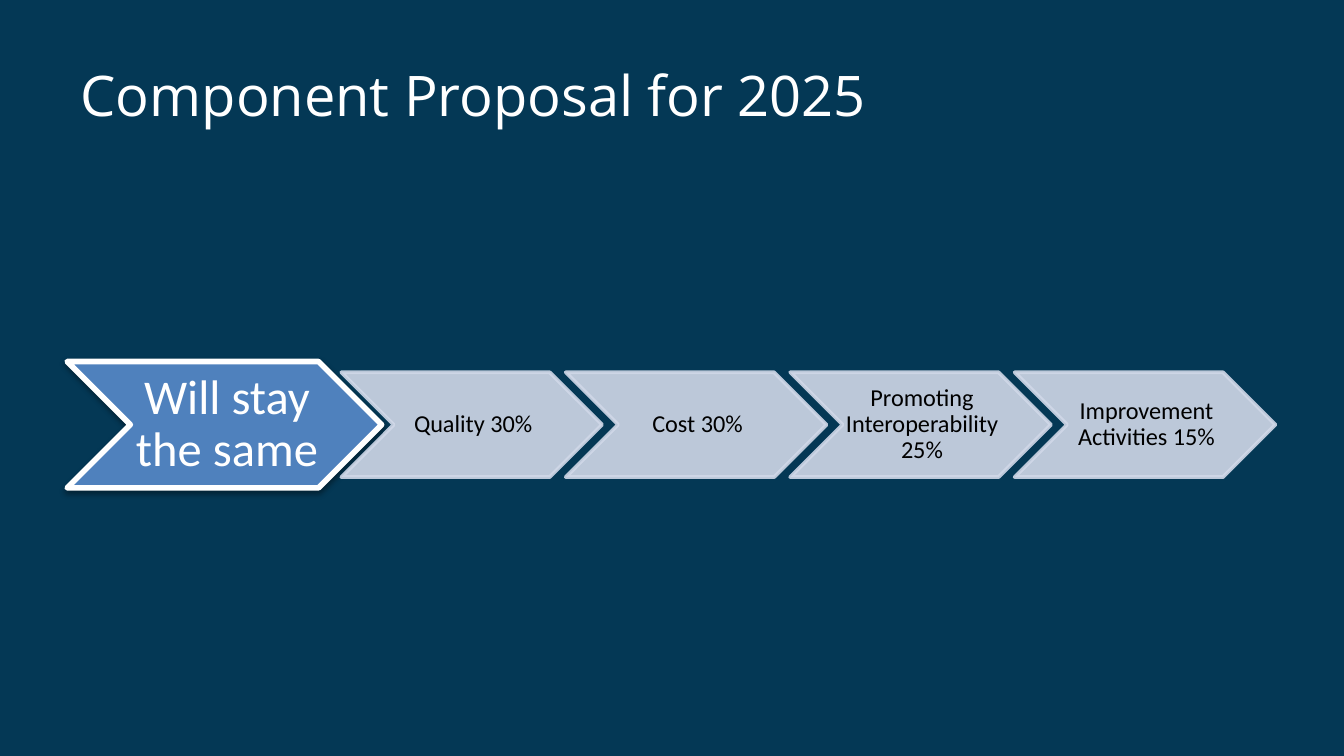
from lxml.etree import SubElement
from pptx import Presentation
from pptx.dml.color import RGBColor
from pptx.enum.shapes import MSO_SHAPE
from pptx.enum.text import MSO_ANCHOR, PP_ALIGN
from pptx.oxml.ns import qn
from pptx.util import Inches, Pt

TITLE = "Component Proposal for 2025"
LEAD = "Will stay the same"
COMPONENTS = [
    "Quality 30%",
    "Cost 30%",
    "Promoting Interoperability 25%",
    "Improvement Activities 15%",
]

SLIDE_WIDTH = 10
SLIDE_HEIGHT = SLIDE_WIDTH * 9 / 16
MIDDLE = 3.16
LEAD_LEFT, LEAD_SIZE = 0.5, (2.34, 0.94)
STEP_LEFT, STEP_PITCH, STEP_SIZE = 2.54, 1.67, (1.94, 0.78)


def color(value):
    return RGBColor.from_string(value)


def add_run(para, text, size, font, ink):
    span = para.add_run()
    span.text = text
    span.font.size = Pt(size)
    span.font.name = font
    span.font.color.rgb = color(ink)


def add_chevron(slide, text, left, size, fill, line, weight, ink, points, inset):
    """Add a labelled chevron centred on the row's middle line."""
    width, height = size
    chevron = slide.shapes.add_shape(
        MSO_SHAPE.CHEVRON, Inches(left), Inches(MIDDLE - height / 2),
        Inches(width), Inches(height))
    chevron.shadow.inherit = False
    chevron.fill.solid()
    chevron.fill.fore_color.rgb = color(fill)
    chevron.line.color.rgb = color(line)
    chevron.line.width = Pt(weight)

    frame = chevron.text_frame
    frame.word_wrap = True
    frame.vertical_anchor = MSO_ANCHOR.MIDDLE
    frame.margin_left, frame.margin_right = Inches(inset), 0
    frame.margin_top = frame.margin_bottom = Inches(inset / 2)
    para = frame.paragraphs[0]
    para.alignment = PP_ALIGN.CENTER
    para.line_spacing = 0.9
    add_run(para, text, points, "Calibri", ink)
    return chevron


def set_opacity(shape, percent):
    for tint in shape._element.spPr.iter(qn("a:srgbClr")):
        SubElement(tint, qn("a:alpha"), val=str(percent * 1000))


def add_drop_shadow(shape):
    effects = shape._element.spPr.find(qn("a:effectLst"))
    shadow = SubElement(
        effects, qn("a:outerShdw"), blurRad=str(Pt(3.1)), dist=str(Pt(1.6)),
        dir="5400000", rotWithShape="0")
    tint = SubElement(shadow, qn("a:srgbClr"), val="000000")
    SubElement(tint, qn("a:alpha"), val="38000")


def main():
    deck = Presentation()
    deck.slide_width, deck.slide_height = Inches(SLIDE_WIDTH), Inches(SLIDE_HEIGHT)
    slide = deck.slides.add_slide(deck.slide_layouts[5])
    slide.background.fill.solid()
    slide.background.fill.fore_color.rgb = color("043855")

    title = slide.shapes.title
    title.left, title.top = Inches(0.5), Inches(0.23)
    title.width, title.height = Inches(9), Inches(0.94)
    title.text_frame.vertical_anchor = MSO_ANCHOR.MIDDLE
    para = title.text_frame.paragraphs[0]
    para.alignment = PP_ALIGN.LEFT
    add_run(para, TITLE, 30, "Open Sans", "FFFFFF")

    lead = add_chevron(slide, LEAD, LEAD_LEFT, LEAD_SIZE,
                       "4F81BD", "FFFFFF", 3, "FFFFFF", 26, 0.04)
    add_drop_shadow(lead)
    for index, component in enumerate(COMPONENTS):
        step = add_chevron(slide, component, STEP_LEFT + index * STEP_PITCH, STEP_SIZE,
                           "D0D8E8", "D0D8E8", 2, "000000", 13, 0.02)
        set_opacity(step, 90)

    deck.save("out.pptx")


if __name__ == "__main__":
    main()
